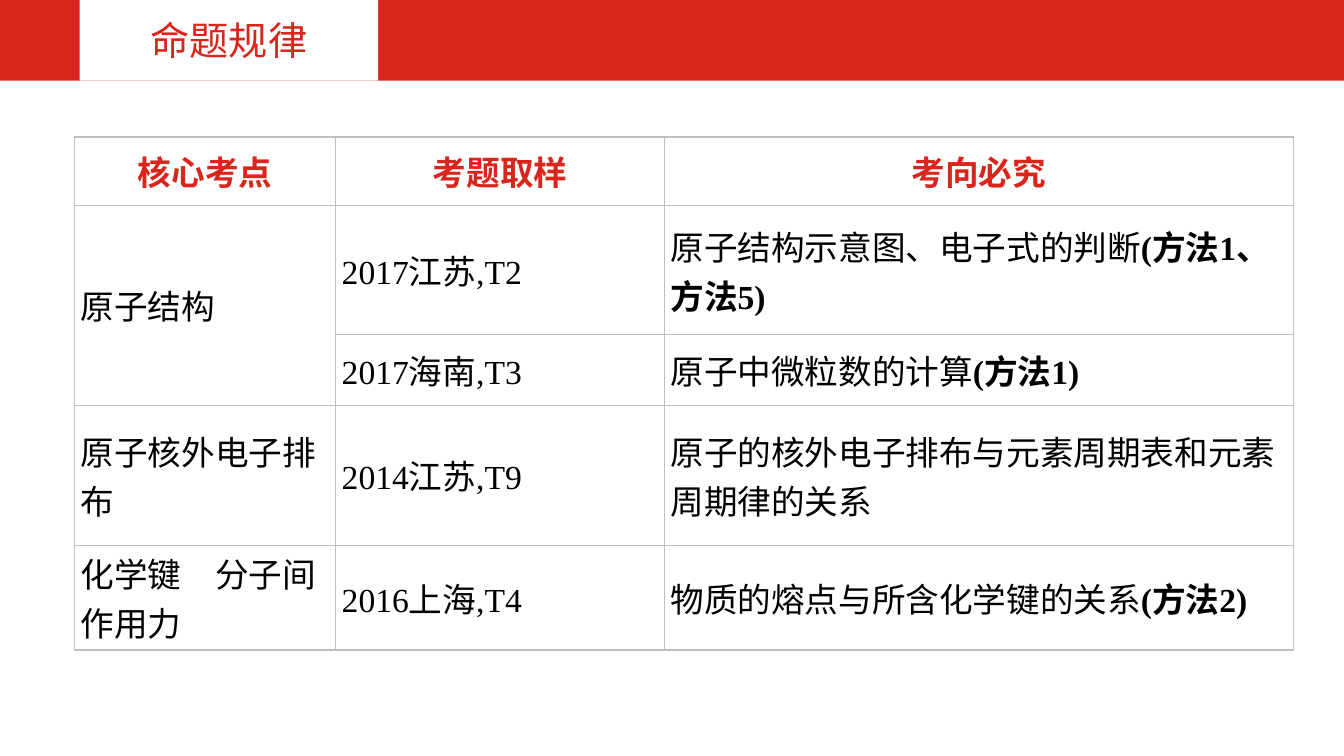
from dataclasses import dataclass

from lxml.etree import SubElement
from pptx import Presentation
from pptx.dml.color import RGBColor
from pptx.enum.shapes import MSO_SHAPE
from pptx.enum.text import MSO_ANCHOR, MSO_AUTO_SIZE, PP_ALIGN
from pptx.oxml import parse_xml
from pptx.oxml.ns import nsdecls, qn
from pptx.util import Inches, Pt

RED = RGBColor(0xDA, 0x25, 0x1C)
WHITE = RGBColor(0xFF, 0xFF, 0xFF)
BLACK = RGBColor(0x00, 0x00, 0x00)
GREY = RGBColor(0xBF, 0xBF, 0xBF)
SERIF, SANS = "Times New Roman", "Noto Sans CJK SC"
WIDTH, HEIGHT = Inches(13.33), Inches(7.5)

# Shares of the slide's width and height, in percent
BANNER_H = 10.67
TAB_X, TAB_W = 5.93, 22.2
TABLE_X, TABLE_Y = 5.55, 18.13
COLS = (19.43, 24.46, 46.81)
ROWS = (9.07, 17.07, 9.33, 18.53, 13.87)


@dataclass(frozen=True)
class Entry:
    """One table row; method is the bold reference closing the last cell."""
    topic: str
    sample: str
    focus: str
    method: str = ""


@dataclass(frozen=True)
class CellStyle:
    font: str
    color: RGBColor
    bold: bool
    align: PP_ALIGN
    pad_x: float
    pad_y: float


HEAD = CellStyle(SANS, RED, True, PP_ALIGN.CENTER, 0.16, 0.08)
BODY = CellStyle(SERIF, BLACK, False, PP_ALIGN.LEFT, 0.06, 0)

ENTRIES = (
    Entry("核心考点", "考题取样", "考向必究"),
    Entry("原子结构", "2017江苏,T2", "原子结构示意图、电子式的判断", "(方法1、方法5)"),
    Entry("", "2017海南,T3", "原子中微粒数的计算", "(方法1)"),
    Entry("原子核外电子排布", "2014江苏,T9", "原子的核外电子排布与元素周期表和元素周期律的关系"),
    Entry("化学键　分子间作用力", "2016上海,T4", "物质的熔点与所含化学键的关系", "(方法2)"),
)


def across(share: float) -> int:
    return round(WIDTH * share / 100)


def down(share: float) -> int:
    return round(HEIGHT * share / 100)


def format_run(r, font: str, size: float, color: RGBColor, bold: bool) -> None:
    r.font.size, r.font.bold = Pt(size), bold
    r.font.color.rgb = color
    r.font.name = font
    SubElement(r.font._element, qn("a:ea")).set("typeface", SANS)


def set_borders(cell) -> None:
    """Draw the four thin grey edges, which must precede the fill."""
    tc_pr = cell._tc.get_or_add_tcPr()
    for i, side in enumerate(("lnL", "lnR", "lnT", "lnB")):
        tc_pr.insert(i, parse_xml(
            f'<a:{side} {nsdecls("a")} w="{Pt(1)}"><a:solidFill>'
            f'<a:srgbClr val="{GREY}"/></a:solidFill></a:{side}>'))


def fill_cell(cell, text: str, method: str, style: CellStyle) -> None:
    cell.fill.background()
    set_borders(cell)
    cell.vertical_anchor = MSO_ANCHOR.MIDDLE
    cell.margin_left = cell.margin_right = Inches(style.pad_x)
    cell.margin_top = cell.margin_bottom = Inches(style.pad_y)
    p = cell.text_frame.paragraphs[0]
    p.alignment = style.align
    for part, bold in ((text, style.bold), (method, True)):
        if part:
            r = p.add_run()
            r.text = part
            format_run(r, style.font, 24, style.color, bold)


def add_title(s, text: str) -> None:
    """Set the title as a white tab on a red banner."""
    title = s.shapes.title
    banner = s.shapes.add_shape(MSO_SHAPE.RECTANGLE, 0, 0, WIDTH, down(BANNER_H))
    banner.shadow.inherit = False
    banner.fill.solid()
    banner.fill.fore_color.rgb = RED
    banner.line.fill.background()
    title.element.addprevious(banner.element)

    title.left, title.top = across(TAB_X), 0
    title.width, title.height = across(TAB_W), down(BANNER_H)
    title.fill.solid()
    title.fill.fore_color.rgb = WHITE
    tf = title.text_frame
    tf.text = text
    tf.auto_size = MSO_AUTO_SIZE.NONE
    tf.vertical_anchor = MSO_ANCHOR.MIDDLE
    p = tf.paragraphs[0]
    p.alignment = PP_ALIGN.CENTER
    format_run(p.runs[0], SERIF, 28, RED, False)


def add_exam_table(s) -> None:
    table = s.shapes.add_table(
        len(ROWS), len(COLS), across(TABLE_X), down(TABLE_Y),
        across(sum(COLS)), down(sum(ROWS))).table
    table.first_row = table.horz_banding = False
    for col, share in zip(table.columns, COLS):
        col.width = across(share)
    for row, share in zip(table.rows, ROWS):
        row.height = down(share)
    for i, entry in enumerate(ENTRIES):
        style = BODY if i else HEAD
        fill_cell(table.cell(i, 0), entry.topic, "", style)
        fill_cell(table.cell(i, 1), entry.sample, "", style)
        fill_cell(table.cell(i, 2), entry.focus, entry.method, style)
    table.cell(1, 0).merge(table.cell(2, 0))


def main() -> None:
    prs = Presentation()
    prs.slide_width, prs.slide_height = WIDTH, HEIGHT
    s = prs.slides.add_slide(prs.slide_layouts.get_by_name("Title Only"))
    add_title(s, "命题规律")
    add_exam_table(s)
    prs.save("out.pptx")


if __name__ == "__main__":
    main()
